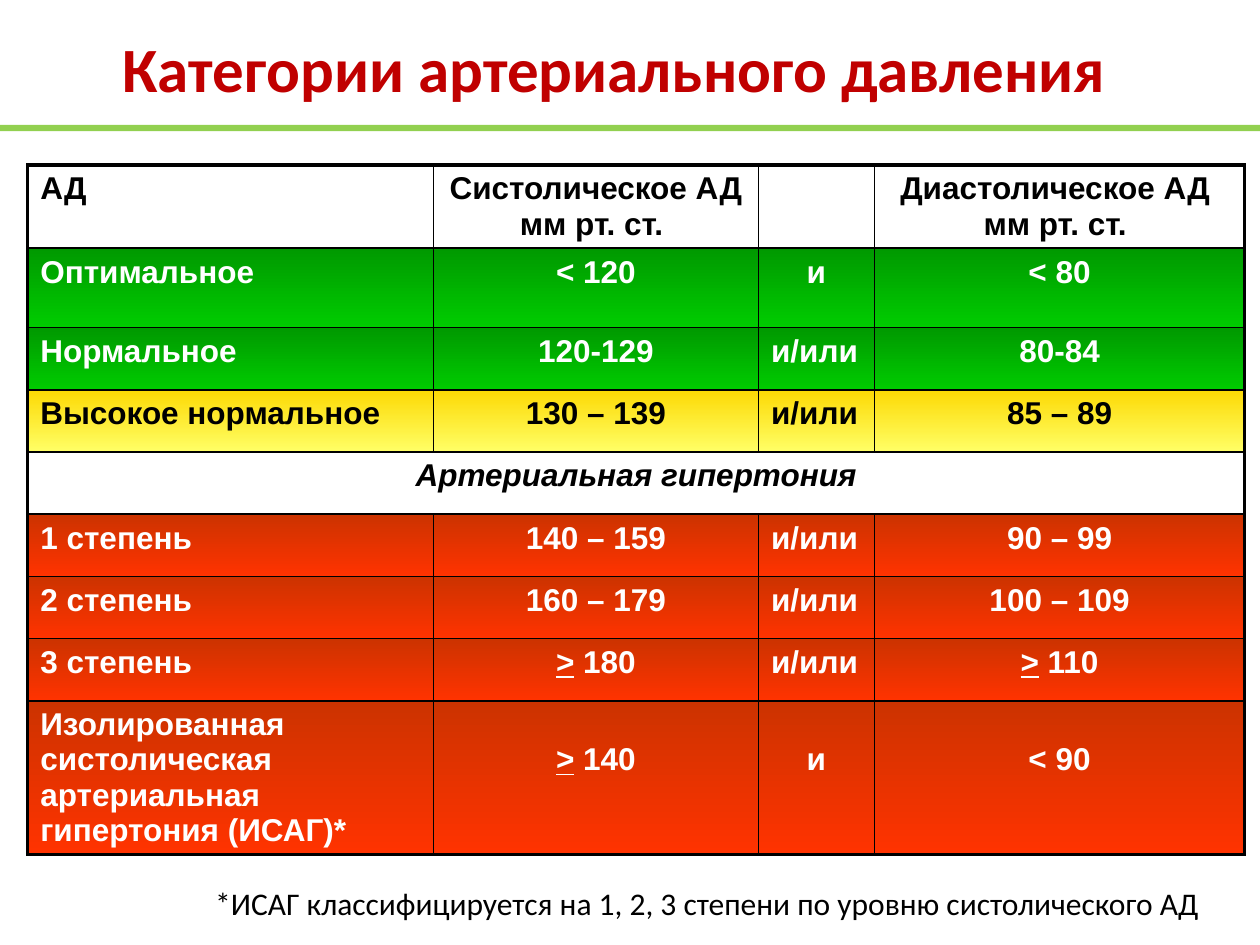
from dataclasses import dataclass

from lxml import etree
from pptx import Presentation
from pptx.dml.color import RGBColor
from pptx.enum.shapes import MSO_SHAPE
from pptx.enum.text import MSO_ANCHOR, MSO_AUTO_SIZE, PP_ALIGN
from pptx.oxml.ns import qn
from pptx.util import Inches, Pt

LEFT, CENTER = PP_ALIGN.LEFT, PP_ALIGN.CENTER
TOP, MIDDLE = MSO_ANCHOR.TOP, MSO_ANCHOR.MIDDLE
FIT_SHAPE, FIT_NONE = MSO_AUTO_SIZE.SHAPE_TO_FIT_TEXT, MSO_AUTO_SIZE.NONE
RECTANGLE = MSO_SHAPE.RECTANGLE
GRID_COLUMNS, GRID_ROWS = 100, 75


@dataclass(frozen=True)
class Theme:
    heading_font: str = "Calibri"
    table_font: str = "Arial"
    title_size: int = 36
    body_size: int = 18
    outer_border: float = 2.25
    inner_border: float = 1
    title: str = "C00000"
    rule: str = "92D050"
    ink: str = "000000"
    paper: str = "FFFFFF"
    normal: tuple = ("009900", "00CC00")
    raised: tuple = ("FCD904", "FFFF66")
    high: tuple = ("CC3300", "FF3300")


class SlideBuilder:
    def __init__(self, presentation, theme):
        self.theme = theme
        self.column = presentation.slide_width / GRID_COLUMNS
        self.row = presentation.slide_height / GRID_ROWS
        self.slide = presentation.slides.add_slide(presentation.slide_layouts[6])

    def place(self, left, top, width, height):
        return (round(left * self.column), round(top * self.row),
                round(width * self.column), round(height * self.row))

    def run(self, paragraph, wording, font, size, color, bold=False, italic=False, underline=False):
        run = paragraph.add_run()
        run.text = wording
        run.font.name = font
        run.font.size = Pt(size)
        run.font.color.rgb = RGBColor.from_string(color)
        run.font.bold, run.font.italic, run.font.underline = bold, italic, underline

    def text(self, area, wording, size, color, bold=False, align=LEFT,
             anchor=TOP, wrap=True, fit=FIT_NONE):
        frame = self.slide.shapes.add_textbox(*self.place(*area)).text_frame
        frame.word_wrap, frame.auto_size, frame.vertical_anchor = wrap, fit, anchor
        paragraph = frame.paragraphs[0]
        paragraph.alignment = align
        self.run(paragraph, wording, self.theme.heading_font, size, color, bold)

    def bar(self, area, color):
        bar = self.slide.shapes.add_shape(RECTANGLE, *self.place(*area))
        bar.shadow.inherit = False
        bar.fill.solid()
        bar.fill.fore_color.rgb = RGBColor.from_string(color)
        bar.line.fill.background()

    def table(self, left, top, widths, heights):
        area = self.place(left, top, sum(widths), sum(heights))
        table = self.slide.shapes.add_table(len(heights), len(widths), *area).table
        table.first_row = table.horz_banding = False
        for column, width in zip(table.columns, widths):
            column.width = round(width * self.column)
        for row, height in zip(table.rows, heights):
            row.height = round(height * self.row)
        return table

    def borders(self, cell, outer_sides):
        properties = cell._tc.get_or_add_tcPr()
        for side in "LRTB":
            width = self.theme.outer_border if side in outer_sides else self.theme.inner_border
            line = etree.SubElement(properties, qn(f"a:ln{side}"), w=str(Pt(width)))
            fill = etree.SubElement(line, qn("a:solidFill"))
            etree.SubElement(fill, qn("a:srgbClr"), val=self.theme.ink)

    def fill(self, cell, colors):
        if not colors:
            cell.fill.background()
        elif len(colors) == 1:
            cell.fill.solid()
            cell.fill.fore_color.rgb = RGBColor.from_string(colors[0])
        else:
            cell.fill.gradient()
            cell.fill.gradient_angle = 270
            for stop, color in zip(cell.fill.gradient_stops, colors):
                stop.color.rgb = RGBColor.from_string(color)

    def cell_text(self, cell, wording, color, align, italic=False):
        frame = cell.text_frame
        for index, line in enumerate(wording.split("\n")):
            paragraph = frame.add_paragraph() if index else frame.paragraphs[0]
            paragraph.alignment = align
            parts = [(">", True), (line[1:], False)] if line.startswith(">") else [(line, False)]
            for part, underline in parts:
                if part:
                    self.run(paragraph, part, self.theme.table_font, self.theme.body_size,
                             color, True, italic, underline)


def main():
    theme = Theme()
    presentation = Presentation()
    presentation.slide_width, presentation.slide_height = Inches(10), Inches(7.5)
    builder = SlideBuilder(presentation, theme)

    builder.text((2.5, 0.8, 92.5, 9.1), "Категории артериального давления",
                 theme.title_size, theme.title, True, CENTER, MIDDLE)

    either = "и/или"
    categories = [
        ((), theme.ink, ["АД", "Систолическое АД \nмм рт. ст. ", "",
                         "Диастолическое АД \nмм рт. ст. "]),
        (theme.normal, theme.paper, ["Оптимальное", "< 120", "и", "< 80"]),
        (theme.normal, theme.paper, ["Нормальное", "120-129", either, "80-84"]),
        (theme.raised, theme.ink, ["Высокое нормальное", "130 – 139", either, "85 – 89"]),
        ((theme.paper,), theme.ink, ["Артериальная гипертония", "", "", ""]),
        (theme.high, theme.paper, ["1 степень", "140 – 159", either, "90 – 99"]),
        (theme.high, theme.paper, ["2 степень", "160 – 179", either, "100 – 109"]),
        (theme.high, theme.paper, ["3 степень", "> 180", either, "> 110"]),
        (theme.high, theme.paper, ["Изолированная систолическая артериальная гипертония (ИСАГ)*",
                                   "> 140", "и", "< 90"]),
    ]
    heights = [6.6, 6.3] + [4.94] * 6 + [12.2]
    pressure = builder.table(2.2, 13.1, [32.2, 25.8, 9.2, 29.4], heights)
    last_row, last_column = len(categories) - 1, 3
    section_row = 4
    pressure.cell(section_row, 0).merge(pressure.cell(section_row, last_column))

    for row, (colors, ink, wordings) in enumerate(categories):
        for column, wording in enumerate(wordings):
            cell = pressure.cell(row, column)
            edges = {"T": row == 0, "B": row == last_row, "L": column == 0,
                     "R": column == last_column or row == section_row}
            builder.borders(cell, [side for side, outer in edges.items() if outer])
            builder.fill(cell, colors)
            section = row == section_row
            flush_left = (column == 0 and not section) or wording == either
            builder.cell_text(cell, wording, ink, LEFT if flush_left else CENTER, section)
            if row == last_row and column:
                cell.margin_top = Inches(0.33)

    builder.bar((0, 9.9, GRID_COLUMNS, 0.5), theme.rule)
    builder.text((16.1, 69.7, 82.7, 4),
                 "*ИСАГ классифицируется на 1, 2, 3 степени по уровню систолического АД",
                 theme.body_size, theme.ink, wrap=False, fit=FIT_SHAPE)
    presentation.save("out.pptx")


if __name__ == "__main__":
    main()
